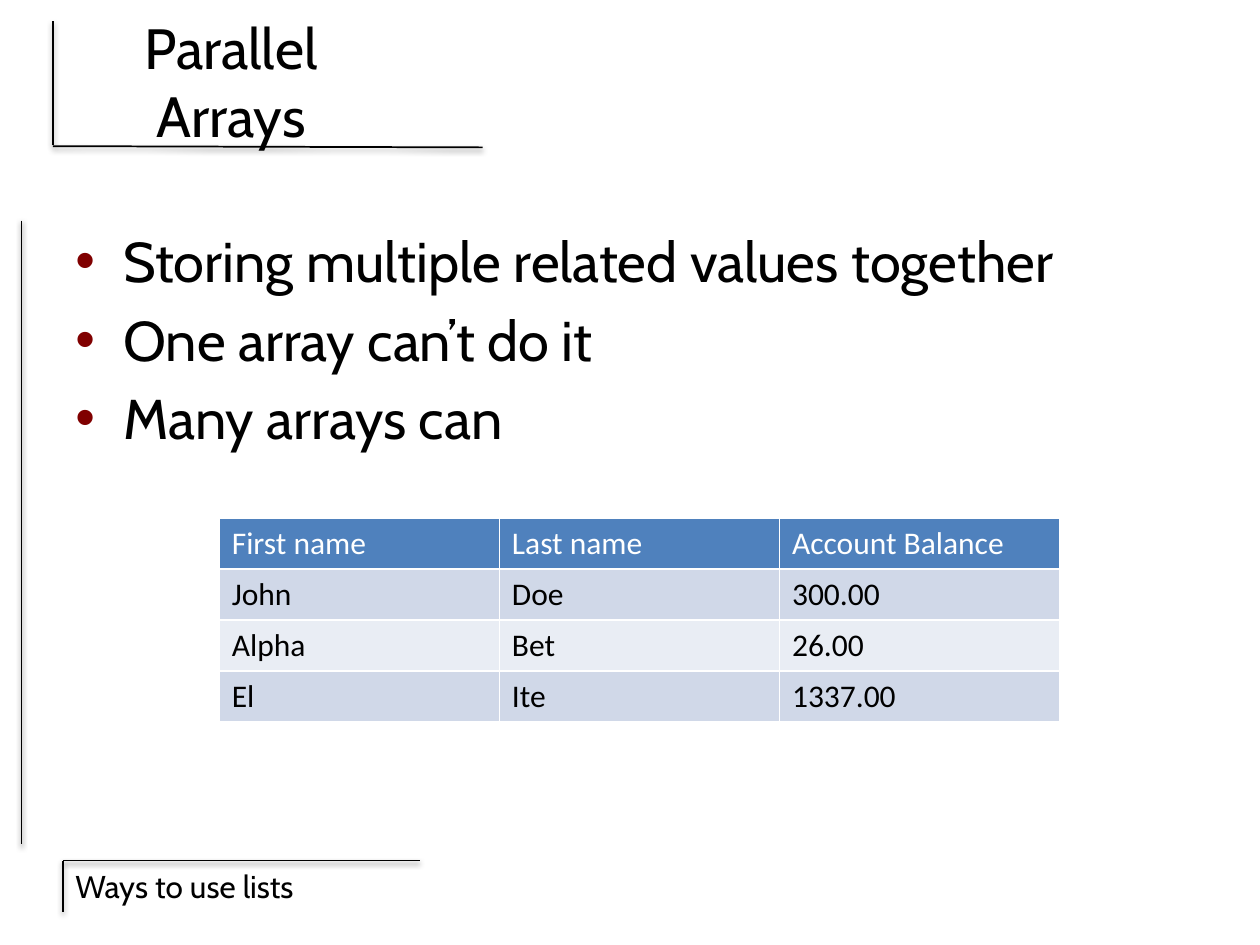
from dataclasses import dataclass

from lxml import etree
from pptx import Presentation
from pptx.dml.color import RGBColor
from pptx.enum import shapes, text
from pptx.oxml import ns
from pptx.util import Inches, Pt


@dataclass
class Rule:
    x1: float
    y1: float
    x2: float
    y2: float


@dataclass
class Box:
    x: float
    y: float
    w: float
    h: float

    def dims(self) -> list:
        return [Inches(v) for v in (self.x, self.y, self.w, self.h)]


RULES = [
    Rule(3.33, 6.83, 0.5, 6.83),
    Rule(0.17, 1.75, 0.17, 6.7),
    Rule(0.5, 6.83, 0.5, 7.24),
    Rule(3.83, 1.17, 0.42, 1.16),
    Rule(0.42, 0.17, 0.42, 1.15),
]
POINTS = [
    "Storing multiple related values together",
    "One array can’t do it",
    "Many arrays can",
]
ROWS = [
    ("First name", "Last name", "Account Balance"),
    ("John", "Doe", "300.00"),
    ("Alpha", "Bet", "26.00"),
    ("El", "Ite", "1337.00"),
]
BANDS = ["E9EDF4", "D0D8E8"]


def color(hexa: str) -> RGBColor:
    return RGBColor.from_string(hexa)


def add(base, tag: str, **attrs: str):
    return etree.SubElement(base, ns.qn(tag), attrs)


def style(para, size: float, face: str, ink: str = "000000") -> None:
    form = {"size": Pt(size), "name": face, "bold": False}
    for key, val in form.items():
        setattr(para.font, key, val)
    para.font.color.rgb = color(ink)


def draw_rule(slide, rule: Rule) -> None:
    ends = [Inches(v) for v in (rule.x1, rule.y1, rule.x2, rule.y2)]
    line = slide.shapes.add_connector(shapes.MSO_CONNECTOR.STRAIGHT, *ends)
    line.line.color.rgb = color("000000")
    line.line.width = Pt(1)
    effect = add(line._element.spPr, "a:effectLst")
    shade = add(effect, "a:outerShdw", blurRad=str(Pt(3.1)), dist=str(Pt(1.6)),
                dir="5400000", rotWithShape="0")
    ink = add(shade, "a:srgbClr", val="000000")
    add(ink, "a:alpha", val="38000")


def draw_title(slide, box: Box) -> None:
    title = slide.shapes.title
    for key, val in zip(("left", "top", "width", "height"), box.dims()):
        setattr(title, key, val)
    frame = title.text_frame
    frame.text = "Parallel Arrays"
    form = {"word_wrap": True, "auto_size": text.MSO_AUTO_SIZE.NONE,
            "vertical_anchor": text.MSO_ANCHOR.MIDDLE}
    for key, val in form.items():
        setattr(frame, key, val)
    para = frame.paragraphs[0]
    para.alignment = text.PP_ALIGN.CENTER
    style(para, 32.4, "Cabin")


def draw_text(slide, box: Box, lines: list[str], size: float):
    frame = slide.shapes.add_textbox(*box.dims()).text_frame
    frame.word_wrap = True
    frame.text = "\n".join(lines)
    for para in frame.paragraphs:
        style(para, size, "Cabin")
    return frame


def add_dot(para) -> None:
    para.space_before = Pt(6.4)
    props = para._p.get_or_add_pPr()
    props.set("marL", str(Inches(0.38)))
    props.set("indent", str(-Inches(0.38)))
    dot = etree.Element(ns.qn("a:buClr"))
    add(dot, "a:srgbClr", val="800000")
    face = etree.Element(ns.qn("a:buFont"), typeface="Arial")
    char = etree.Element(ns.qn("a:buChar"), char="•")
    last = props.find(ns.qn("a:defRPr"))
    for node in (dot, face, char):
        if last is None:
            props.append(node)
        else:
            last.addprevious(node)


def draw_table(slide, box: Box) -> None:
    table = slide.shapes.add_table(len(ROWS), len(ROWS[0]), *box.dims()).table
    for r, row in enumerate(ROWS):
        for c, word in enumerate(row):
            cell = table.cell(r, c)
            cell.text = word
            cell.fill.solid()
            cell.fill.fore_color.rgb = color(BANDS[r % 2] if r else "4F81BD")
            ink = "000000" if r else "FFFFFF"
            style(cell.text_frame.paragraphs[0], 18, "Calibri", ink)


def main() -> None:
    deck = Presentation()
    deck.slide_width, deck.slide_height = Inches(10), Inches(7.5)
    slide = deck.slides.add_slide(deck.slide_layouts[5])
    for rule in RULES:
        draw_rule(slide, rule)
    draw_text(slide, Box(0.5, 6.83, 2.42, 0.4), ["Ways to use lists"], 18)
    draw_title(slide, Box(0.5, 0.17, 2.67, 0.95))
    body = draw_text(slide, Box(0.5, 1.75, 9, 4.95), POINTS, 32)
    for para in body.paragraphs:
        add_dot(para)
    draw_table(slide, Box(1.74, 4.11, 6.67, 1.62))
    deck.save("out.pptx")


if __name__ == "__main__":
    main()
